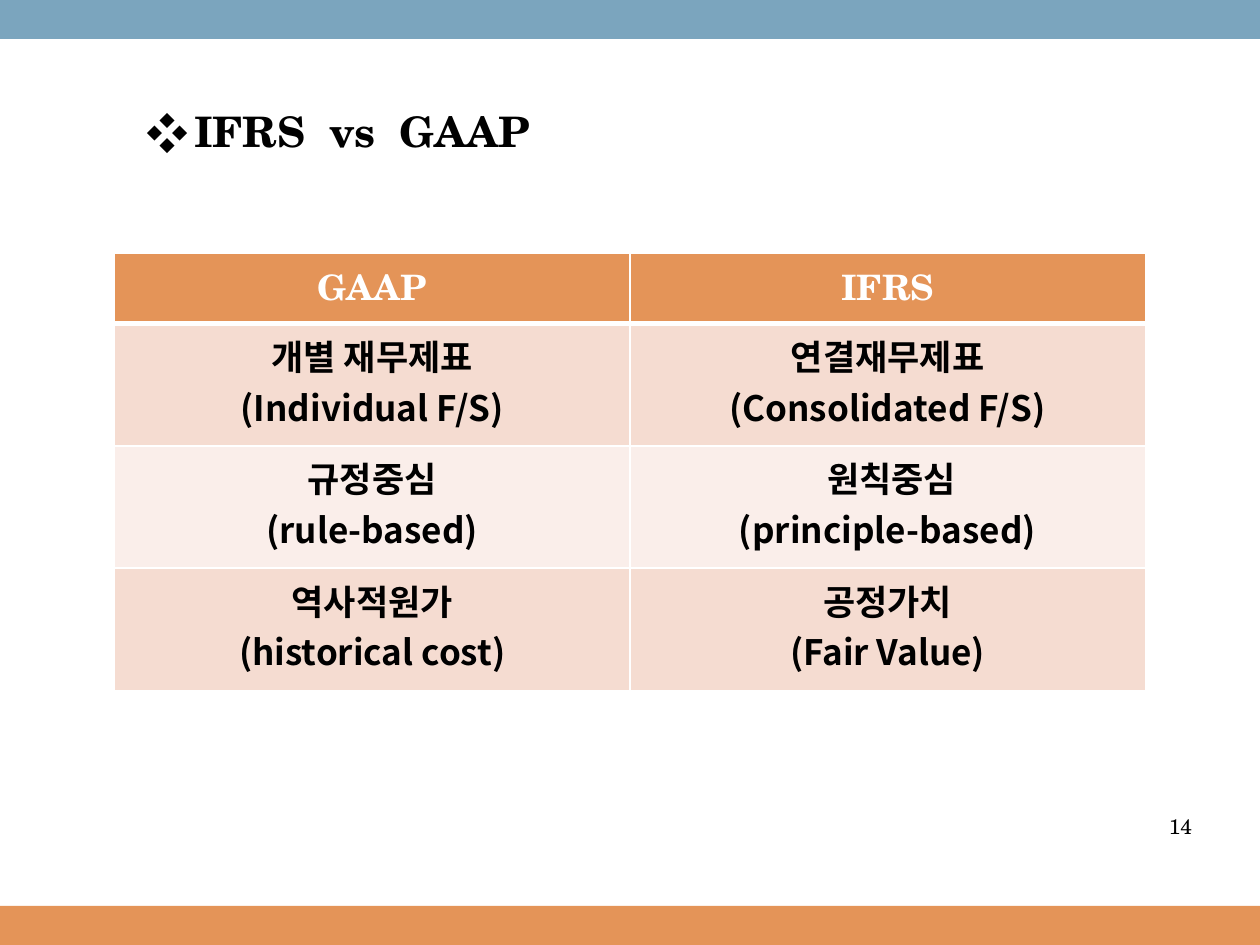
from lxml import etree
from pptx import Presentation
from pptx.dml.color import RGBColor
from pptx.enum import shapes, text
from pptx.oxml import ns
from pptx.util import Inches, Pt

COLORS = {"blue": "7BA5BE", "orange": "E49458", "peach": "F5DCD1",
          "pale": "FAEEEA", "white": "FFFFFF", "black": "000000"}
SERIF, KOREAN = "TeX Gyre Schola", "Noto Sans CJK KR"
ROWS = [
    ("GAAP", "IFRS"),
    ("개별 재무제표\n(Individual F/S)", "연결재무제표\n(Consolidated F/S)"),
    ("규정중심\n(rule-based)", " 원칙중심\n(principle-based)"),
    ("역사적원가\v(historical cost)", "공정가치\n(Fair Value)"),
]


class SlideBuilder:
    def __init__(self, deck):
        self.page = deck.slides.add_slide(deck.slide_layouts[5])

    def color(self, name):
        return RGBColor.from_string(COLORS[name])

    def style(self, frame, size, font, color="black", bold=False,
              align=text.PP_ALIGN.LEFT):
        for para in frame.paragraphs:
            para.alignment = align
            for span in para.runs:
                span.font.size, span.font.bold = Pt(size), bold
                span.font.name = font
                span.font.color.rgb = self.color(color)
                east_asian = etree.SubElement(span._r.get_or_add_rPr(), ns.qn("a:ea"))
                east_asian.set("typeface", font)

    def band(self, top, color):
        box = self.page.shapes.add_shape(
            shapes.MSO_SHAPE.RECTANGLE, 0, Inches(top), Inches(10), Inches(0.31))
        box.shadow.inherit = False
        box.fill.solid()
        box.fill.fore_color.rgb = self.color(color)
        box.line.fill.background()

    def title(self, words, left, top, width, height):
        box = self.page.shapes.title
        box.left, box.top = Inches(left), Inches(top)
        box.width, box.height = Inches(width), Inches(height)
        frame = box.text_frame
        frame.text = words
        frame.vertical_anchor = text.MSO_ANCHOR.TOP
        frame.auto_size = text.MSO_AUTO_SIZE.NONE
        self.style(frame, 24, SERIF, bold=True)
        # Hanging bullet
        properties = frame.paragraphs[0]._p.get_or_add_pPr()
        properties.set("marL", str(Inches(0.38)))
        properties.set("indent", str(-Inches(0.38)))
        etree.SubElement(properties, ns.qn("a:buFont")).set("typeface", "Wingdings")
        properties[-1].set("typeface", KOREAN)
        etree.SubElement(properties, ns.qn("a:buChar")).set("char", "❖")

    def label(self, words, left, top, width, height):
        box = self.page.shapes.add_textbox(
            Inches(left), Inches(top), Inches(width), Inches(height))
        frame = box.text_frame
        frame.word_wrap = True
        frame.vertical_anchor = text.MSO_ANCHOR.MIDDLE
        frame.text = words
        self.style(frame, 12, SERIF, align=text.PP_ALIGN.RIGHT)

    def borders(self, cell, bottom):
        properties = cell._tc.get_or_add_tcPr()
        for side, width in (("L", 1), ("R", 1), ("T", 1), ("B", bottom)):
            line = etree.SubElement(properties, ns.qn(f"a:ln{side}"), w=str(Pt(width)))
            fill = etree.SubElement(line, ns.qn("a:solidFill"))
            etree.SubElement(fill, ns.qn("a:srgbClr"), val=COLORS["white"])

    def table(self, rows, left, top, width, heights):
        table = self.page.shapes.add_table(
            len(rows), len(rows[0]), Inches(left), Inches(top),
            Inches(width), Inches(sum(heights))).table
        for i, (row, height) in enumerate(zip(rows, heights)):
            table.rows[i].height = Inches(height)
            header = i == 0
            fill = "orange" if header else "peach" if i % 2 else "pale"
            for j, words in enumerate(row):
                cell = table.cell(i, j)
                self.borders(cell, 3 if header else 1)
                cell.fill.solid()
                cell.fill.fore_color.rgb = self.color(fill)
                cell.text_frame.text = words
                self.style(cell.text_frame, 20, SERIF if header else KOREAN,
                           "white" if header else "black", True,
                           text.PP_ALIGN.CENTER)


def main():
    deck = Presentation()
    deck.slide_width, deck.slide_height = Inches(10), Inches(7.5)
    slide = SlideBuilder(deck)

    # Bands along the edges
    slide.band(7.19, "orange")
    slide.band(0, "blue")

    # Heading, comparison and page number
    slide.title("IFRS  vs  GAAP", 1.06, 0.79, 5.75, 0.5)
    slide.table(ROWS, 0.91, 2.01, 8.18, [0.56] + [0.97] * 3)
    slide.label("14", 8.89, 6.27, 0.67, 0.57)

    deck.save("out.pptx")


if __name__ == "__main__":
    main()
